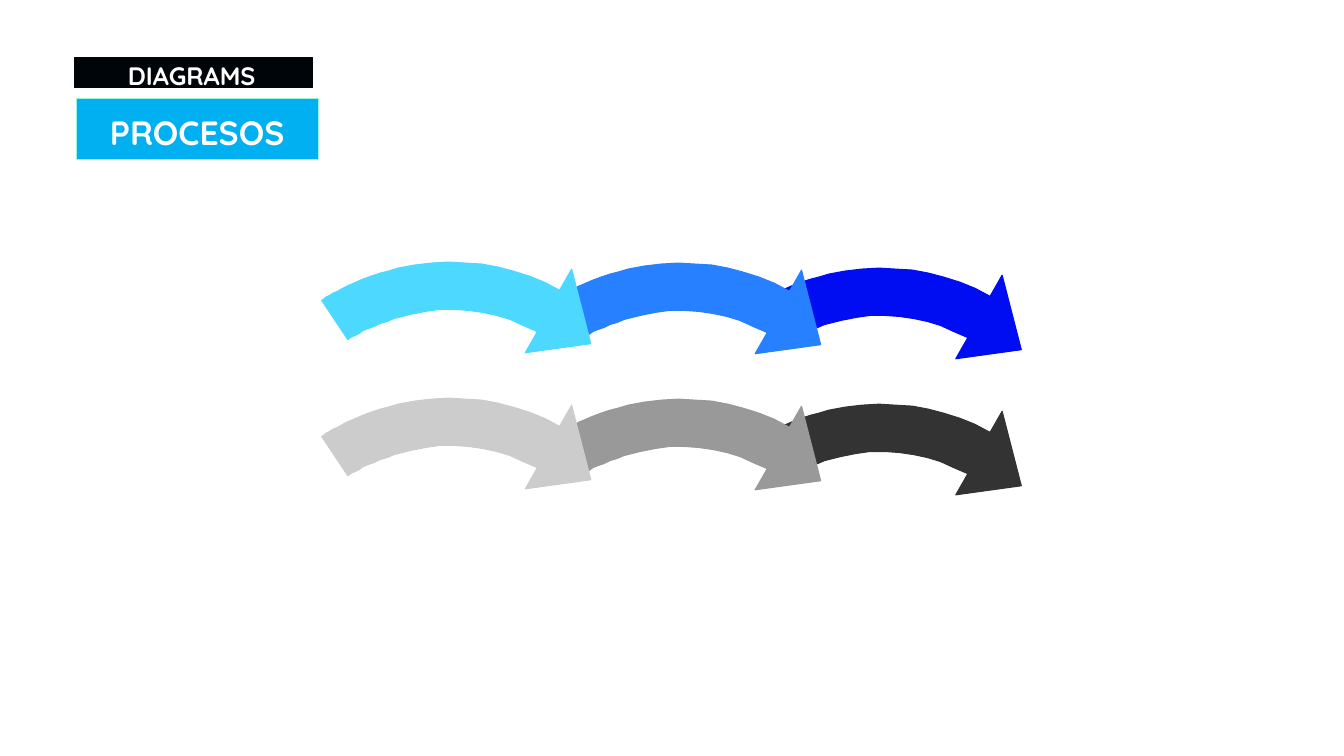
"""Build the PROCESOS slide: two rows of three chained curved arrows."""
from pptx import Presentation
from pptx.dml.color import RGBColor
from pptx.enum.shapes import MSO_SHAPE
from pptx.enum.text import MSO_ANCHOR, MSO_AUTO_SIZE, PP_ALIGN
from pptx.util import Inches, Pt

RECTANGLE = MSO_SHAPE.RECTANGLE
TOP = MSO_ANCHOR.TOP
LEFT = PP_ALIGN.LEFT
GROW = MSO_AUTO_SIZE.SHAPE_TO_FIT_TEXT

FONT = "Quicksand"
SECTION = "DIAGRAMS"
TITLE = "PROCESOS"
SECTION_BAR = (0.74, 0.57, 2.36, 0.3)
SECTION_LABEL = (1.17, 0.55, 1.76, 0.4)
TITLE_BAR = (0.76, 0.98, 2.4, 0.6)
TITLE_LABEL = (0.99, 1.06, 1.94, 0.5)

ROWS = [
    ["4DD9FF", "2680FF", "000DF2"],
    ["CCCCCC", "999999", "333333"],
]
ROW_PITCH = 1.35
STEPS = [(3.19, 2.6), (5.47, 2.61), (7.46, 2.66)]

UNITS_PER_INCH = 100
OUTER_EDGE = [(0, 38), (2, 37), (4, 35), (8, 33), (11, 31), (16, 29), (21, 26),
              (27, 23), (34, 20), (41, 17), (49, 14), (58, 11), (66, 9), (76, 6),
              (92, 3), (109, 1), (126, 0), (142, 1), (159, 2), (175, 5),
              (190, 9), (206, 14), (221, 20), (236, 28)]
HEAD = [(248, 7), (267, 81), (202, 90)]
INNER_EDGE = [(214, 69), (200, 63), (187, 57), (174, 53), (160, 50), (146, 48),
              (132, 47), (117, 47), (103, 49), (88, 52), (80, 54), (72, 56),
              (65, 59), (58, 61), (52, 64), (46, 66), (41, 68), (37, 71),
              (33, 73), (30, 74), (26, 77)]
ARROW = OUTER_EDGE + HEAD + INNER_EDGE


def color(value):
    return RGBColor.from_string(value)


def paint(shape, fill, line):
    shape.shadow.inherit = False
    shape.fill.solid()
    shape.fill.fore_color.rgb = color(fill)
    shape.line.color.rgb = color(line)
    shape.line.width = 0


def add_bar(shapes, box, fill, line):
    paint(shapes.add_shape(RECTANGLE, *map(Inches, box)), fill, line)


def write(label, text, size, wrap):
    frame = label.text_frame
    frame.word_wrap = wrap
    frame.auto_size = GROW
    frame.vertical_anchor = TOP
    paragraph = frame.paragraphs[0]
    paragraph.alignment = LEFT
    run = paragraph.add_run()
    run.text = text
    run.font.name = FONT
    run.font.size = Pt(size)
    run.font.bold = True
    run.font.color.rgb = color("FFFFFF")


def add_arrow(shapes, left, top, fill):
    builder = shapes.build_freeform(*ARROW[0], scale=Inches(1) / UNITS_PER_INCH)
    builder.add_line_segments(ARROW[1:], close=True)
    paint(builder.convert_to_shape(Inches(left), Inches(top)), fill, fill)


def main():
    deck = Presentation()
    deck.slide_width, deck.slide_height = Inches(13.33), Inches(7.5)
    slide = deck.slides.add_slide(deck.slide_layouts[5])
    shapes = slide.shapes

    add_bar(shapes, TITLE_BAR, "00B0F0", "9FF2DD")
    section = shapes.add_group_shape().shapes
    add_bar(section, SECTION_BAR, "000509", "000509")
    write(section.add_textbox(*map(Inches, SECTION_LABEL)), SECTION, 18, True)

    title = shapes.title
    title.left, title.top, title.width, title.height = map(Inches, TITLE_LABEL)
    write(title, TITLE, 24, False)
    title.element.getparent().append(title.element)

    arrows = shapes.add_group_shape().shapes
    for row, fills in enumerate(ROWS):
        for (left, top), fill in reversed(list(zip(STEPS, fills))):
            add_arrow(arrows, left, top + row * ROW_PITCH, fill)

    deck.save("out.pptx")


if __name__ == "__main__":
    main()
